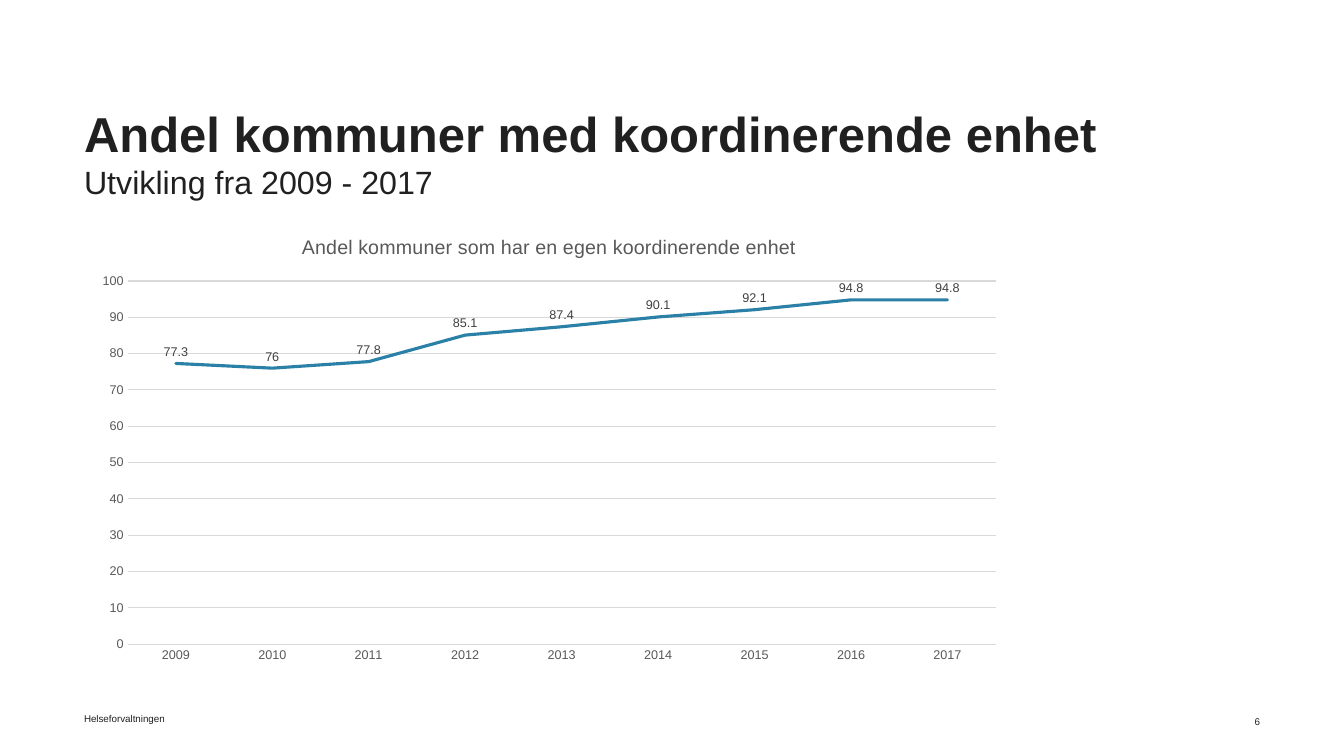
from lxml import etree
from pptx import Presentation, util as u
from pptx.chart.data import CategoryChartData
from pptx.dml.color import RGBColor
from pptx.enum import chart as c, text as t

PX = 9525
THEME = {
    "font": "Arial",
    "ink": "202020", "grey": "595959", "label": "404040", "grid": "D9D9D9", "line": "2A80A6",
    "title": 35, "subtitle": 23, "chart_title": 14, "axis": 9, "footer": 7,
}
CHART_TITLE = "Andel kommuner som har en egen koordinerende enhet"
SHARES = [77.3, 76, 77.8, 85.1, 87.4, 90.1, 92.1, 94.8, 94.8]


def style_font(font, size, color, bold=False):
    for name, value in {"name": THEME["font"], "size": u.Pt(THEME[size]), "bold": bold}.items():
        setattr(font, name, value)
    font.color.rgb = RGBColor.from_string(THEME[color])


def style_line(line, color, width):
    line.color.rgb = RGBColor.from_string(THEME[color])
    line.width = u.Pt(width)


presentation = Presentation()
presentation.slide_width, presentation.slide_height = 1280 * PX, 720 * PX
slide = presentation.slides.add_slide(presentation.slide_layouts[5])

TEXTS = [
    ("Andel kommuner med koordinerende enhet", (80, 34, 1120, 121), "title", "BOTTOM", "LEFT"),
    ("Utvikling fra 2009 - 2017", (80, 155, 1120, 37), "subtitle", "TOP", "LEFT"),
    ("Helseforvaltningen", (80, 678, 94, 12), "footer", "MIDDLE", "LEFT"),
    ("6", (1106, 681, 94, 12), "footer", "MIDDLE", "RIGHT"),
]
for wording, box, size, anchor, align in TEXTS:
    is_title = size == "title"
    shape = slide.shapes.title if is_title else slide.shapes.add_textbox(0, 0, 0, 0)
    for side, length in zip(("left", "top", "width", "height"), box):
        setattr(shape, side, length * PX)
    frame = shape.text_frame
    frame_format = {
        "margin_left": 0, "margin_top": 0, "margin_right": 0, "margin_bottom": 0,
        "word_wrap": True, "auto_size": t.MSO_AUTO_SIZE.NONE,
        "vertical_anchor": t.MSO_ANCHOR[anchor],
    }
    for name, value in frame_format.items():
        setattr(frame, name, value)
    paragraph = frame.paragraphs[0]
    paragraph.alignment = t.PP_ALIGN[align]
    run = paragraph.add_run()
    run.text = wording
    style_font(run.font, size, "ink", is_title)

data = CategoryChartData()
data.categories = [str(year) for year in range(2009, 2018)]
data.add_series(CHART_TITLE, SHARES)
chart_box = [length * PX for length in (80, 206, 886, 434)]
chart = slide.shapes.add_chart(c.XL_CHART_TYPE.LINE, *chart_box, data).chart
chart.has_legend = False
chart.has_title = True
chart.chart_title.include_in_layout = False
chart.chart_title.text_frame.text = CHART_TITLE
title_run = chart.chart_title.text_frame.paragraphs[0].runs[0]
style_font(title_run.font, "chart_title", "grey")

for axis in (chart.category_axis, chart.value_axis):
    axis.major_tick_mark = axis.minor_tick_mark = c.XL_TICK_MARK.NONE
    style_font(axis.tick_labels.font, "axis", "grey")
style_line(chart.category_axis.format.line, "grid", 0.75)
value_format = {"minimum_scale": 0, "maximum_scale": 100, "major_unit": 10, "has_major_gridlines": True}
for name, value in value_format.items():
    setattr(chart.value_axis, name, value)
chart.value_axis.format.line.fill.background()
style_line(chart.value_axis.major_gridlines.format.line, "grid", 0.75)

series = chart.plots[0].series[0]
series.smooth = False
series.marker.style = c.XL_MARKER_STYLE.NONE
style_line(series.format.line, "line", 2.25)
series.format.line._get_or_add_ln().set("cap", "rnd")
labels = series.data_labels
labels.show_value = True
labels.position = c.XL_LABEL_POSITION.ABOVE
style_font(labels.font, "axis", "label")

presentation.save("out.pptx")
